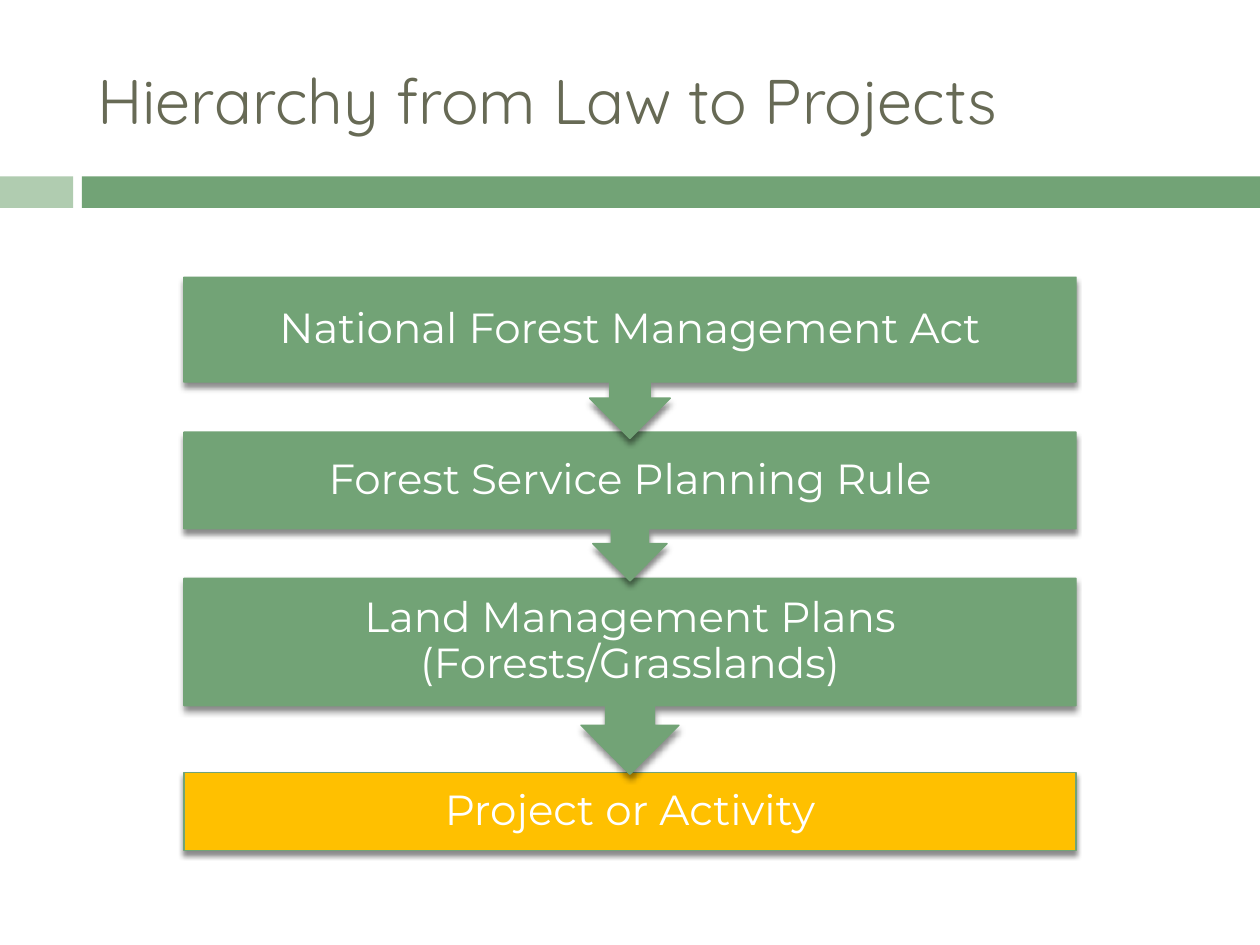
from lxml.etree import SubElement
from pptx import Presentation
from pptx.dml.color import RGBColor
from pptx.enum.shapes import MSO_SHAPE as Shape
from pptx.enum.text import MSO_ANCHOR as Anchor, MSO_AUTO_SIZE as AutoSize, PP_ALIGN as Align
from pptx.oxml.ns import qn
from pptx.util import Inches, Pt

WHITE = RGBColor(0xFF, 0xFF, 0xFF)
GREEN = RGBColor(0x72, 0xA3, 0x76)
PALE_GREEN = RGBColor(0xB0, 0xCC, 0xB0)
AMBER = RGBColor(0xFF, 0xC0, 0x00)
OLIVE = RGBColor(0x67, 0x6A, 0x55)

COLUMNS, ROWS = 100, 75
BOX_LEFT, BOX_WIDTH = 14.6, 70.8
PADDING = 1.9
BODY_SHARE = 0.65

LEVELS = [
    ("Project or Activity", 61.3, 6.2, AMBER, False),
    ("Land Management Plans (Forests/Grasslands)", 45.9, 15.55, GREEN, True),
    ("Forest Service Planning Rule", 34.3, 11.8, GREEN, True),
    ("National Forest Management Act", 22, 12.8, GREEN, True),
]


class SlideBuilder:
    title_font, body_font = "Quicksand", "Montserrat"
    title_size, body_size = Pt(36), Pt(24)

    def __init__(self, deck):
        self.column = deck.slide_width / COLUMNS
        self.row = deck.slide_height / ROWS
        self.slide = deck.slides.add_slide(deck.slide_layouts[5])

    def across(self, columns):
        return round(columns * self.column)

    def down(self, rows):
        return round(rows * self.row)

    def place(self, left, top, width, height):
        return self.across(left), self.down(top), self.across(width), self.down(height)

    def set_text(self, frame, text, font, size, color, align):
        frame.word_wrap = True
        frame.auto_size = AutoSize.NONE
        frame.vertical_anchor = Anchor.MIDDLE
        para = frame.paragraphs[0]
        para.text = text
        para.alignment = align
        para.font.name, para.font.size = font, size
        para.font.color.rgb = color
        return para

    def title(self, text, *area):
        title = self.slide.shapes.title
        title.left, title.top, title.width, title.height = self.place(*area)
        self.set_text(title.text_frame, text, self.title_font, self.title_size, OLIVE, Align.LEFT)

    def bar(self, color, *area):
        bar = self.slide.shapes.add_shape(Shape.RECTANGLE, *self.place(*area))
        bar.shadow.inherit = False
        bar.fill.solid()
        bar.fill.fore_color.rgb = color
        bar.line.fill.background()

    def group(self):
        return self.slide.shapes.add_group_shape()

    def level(self, group, text, top, height, fill, has_arrow):
        left, right = BOX_LEFT, BOX_LEFT + BOX_WIDTH
        middle, tip = COLUMNS / 2, top + height
        bottom = top + height * BODY_SHARE if has_arrow else tip
        outline = [(left, top), (right, top), (right, bottom)]
        if has_arrow:
            head, neck = height / 4, height / 8
            outline += [
                (middle + neck, bottom), (middle + neck, tip - head),
                (middle + head, tip - head), (middle, tip),
                (middle - head, tip - head), (middle - neck, tip - head),
                (middle - neck, bottom),
            ]
        outline.append((left, bottom))
        points = [(self.across(x), self.down(y)) for x, y in outline]
        builder = group.shapes.build_freeform(*points[0])
        builder.add_line_segments(points[1:], close=True)
        box = builder.convert_to_shape()
        box.fill.solid()
        box.fill.fore_color.rgb = fill
        box.line.color.rgb = GREEN
        box.line.width = Pt(0.79)
        self.shadow(box)
        frame = box.text_frame
        frame.margin_left = frame.margin_right = self.across(PADDING)
        frame.margin_top = self.down(PADDING)
        frame.margin_bottom = self.down(PADDING + tip - bottom)
        para = self.set_text(frame, text, self.body_font, self.body_size, WHITE, Align.CENTER)
        para.line_spacing = 0.9

    def shadow(self, box):
        box.shadow.inherit = False
        effects = box._element.spPr.find(qn("a:effectLst"))
        outer = SubElement(effects, qn("a:outerShdw"), blurRad=str(Pt(3)),
                           dist=str(Pt(2.4)), dir="5400000", rotWithShape="0")
        color = SubElement(outer, qn("a:srgbClr"), val="000000")
        SubElement(color, qn("a:alpha"), val="45000")


def main():
    deck = Presentation()
    deck.slide_width, deck.slide_height = Inches(10), Inches(7.5)
    page = SlideBuilder(deck)
    page.bar(PALE_GREEN, 0, 14, 5.8, 2.5)
    page.bar(GREEN, 6.5, 14, 93.5, 2.5)
    page.title("Hierarchy from Law to Projects", 6.7, 2.5, 89.2, 10.8)
    hierarchy = page.group()
    for level in LEVELS:
        page.level(hierarchy, *level)
    deck.save("out.pptx")


if __name__ == "__main__":
    main()
